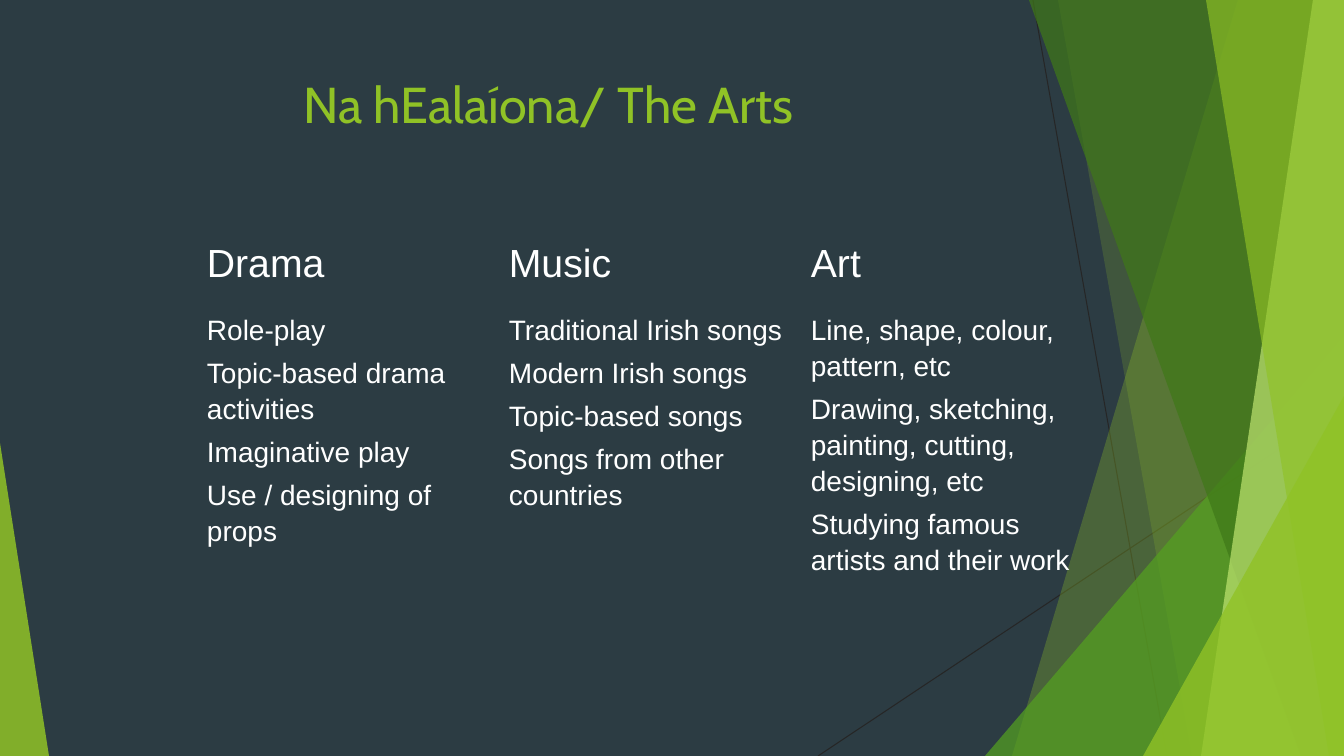
from dataclasses import dataclass

from lxml import etree
from pptx import Presentation
from pptx import util as u
from pptx.dml.color import RGBColor
from pptx.enum import shapes, text
from pptx.oxml.ns import qn

EMU_PER_PX = 914400 / 100.8
WIDTH, HEIGHT = 1344, 756
NO_GRID_STYLE = "{2D5ABB26-0587-4C30-8999-92F81FD0307C}"


@dataclass(frozen=True)
class Theme:
    background: str = "2C3C43"
    hairline: str = "262626"
    lime: str = "90C226"
    green: str = "54A021"
    forest: str = "3F7818"
    pale: str = "BFE471"
    white: str = "FFFFFF"
    title_font: str = "Cabin"
    body_font: str = "Arial"
    title_size: int = 36
    heading_size: int = 28
    body_size: int = 20


def px(length):
    return u.Emu(round(length * EMU_PER_PX))


class SlideBuilder:
    def __init__(self, page, theme):
        self.page = page
        self.theme = theme
        page.background.fill.solid()
        page.background.fill.fore_color.rgb = RGBColor.from_string(theme.background)

    def style_font(self, paragraph, name, size, color):
        paragraph.font.name = name
        paragraph.font.size = u.Pt(size)
        paragraph.font.color.rgb = RGBColor.from_string(color)

    def paint(self, shape, color, opacity):
        shape.shadow.inherit = False
        shape.line.fill.background()
        shape.fill.solid()
        shape.fill.fore_color.rgb = RGBColor.from_string(color)
        swatch = shape.fill._xPr.find(qn("a:solidFill"))[0]
        etree.SubElement(swatch, qn("a:alpha"), val=str(opacity * 1000))

    def hairline(self, x1, y1, x2, y2):
        line = self.page.shapes.add_connector(
            shapes.MSO_CONNECTOR.STRAIGHT, px(x1), px(y1), px(x2), px(y2))
        line.line.color.rgb = RGBColor.from_string(self.theme.hairline)
        line.line.width = u.Pt(0.75)
        etree.SubElement(line._element.spPr, qn("a:effectLst"))

    def right_band(self, top_x, bottom_x, color, opacity):
        outline = self.page.shapes.build_freeform(top_x, 0, scale=EMU_PER_PX)
        outline.add_line_segments([(WIDTH, 0), (WIDTH, HEIGHT), (bottom_x, HEIGHT)])
        self.paint(outline.convert_to_shape(), color, opacity)

    def corner(self, left, top, width, apex, color, opacity):
        triangle = self.page.shapes.add_shape(
            shapes.MSO_SHAPE.ISOSCELES_TRIANGLE,
            px(left), px(top), px(width), px(HEIGHT - top))
        triangle.adjustments[0] = apex
        self.paint(triangle, color, opacity)

    def title(self, words, left, top, width, height):
        box = self.page.shapes.add_textbox(px(left), px(top), px(width), px(height))
        frame = box.text_frame
        frame.word_wrap = True
        frame.vertical_anchor = text.MSO_ANCHOR.TOP
        paragraph = frame.paragraphs[0]
        paragraph.text = words
        paragraph.alignment = text.PP_ALIGN.CENTER
        self.style_font(paragraph, self.theme.title_font, self.theme.title_size, self.theme.lime)

    def cell(self, cell, lines, size, space_before):
        cell.fill.background()
        cell.margin_left = cell.margin_right = px(10)
        cell.margin_top = cell.margin_bottom = px(10)
        cell.text_frame.text = "\n".join(lines)
        for paragraph in cell.text_frame.paragraphs:
            paragraph.line_spacing = 1.15
            paragraph.space_before = u.Pt(space_before)
            self.style_font(paragraph, self.theme.body_font, size, self.theme.white)

    def table(self, subjects, left, top, column_width, row_heights):
        table = self.page.shapes.add_table(
            len(row_heights), len(subjects), px(left), px(top),
            px(column_width * len(subjects)), px(sum(row_heights))).table
        table.first_row = table.horz_banding = False
        table._tbl.tblPr.find(qn("a:tableStyleId")).text = NO_GRID_STYLE
        for row, height in zip(table.rows, row_heights):
            row.height = px(height)
        for index, (heading, activities) in enumerate(subjects.items()):
            table.columns[index].width = px(column_width)
            self.cell(table.cell(0, index), [heading], self.theme.heading_size, 7)
            self.cell(table.cell(1, index), activities, self.theme.body_size, 5)


SUBJECTS = {
    "Drama": [
        "Role-play",
        "Topic-based drama activities",
        "Imaginative play",
        "Use / designing of props",
    ],
    "Music": [
        "Traditional Irish songs",
        "Modern Irish songs",
        "Topic-based songs",
        "Songs from other countries",
    ],
    "Art": [
        "Line, shape, colour, pattern, etc",
        "Drawing, sketching, painting, cutting, designing, etc",
        "Studying famous artists and their work",
    ],
}


def main():
    deck = Presentation()
    deck.slide_width, deck.slide_height = px(WIDTH), px(HEIGHT)
    theme = Theme()
    slide = SlideBuilder(deck.slides.add_slide(deck.slide_layouts[6]), theme)

    slide.hairline(1033, 0, 1167, HEIGHT)
    slide.hairline(WIDTH, 406, 818, HEIGHT)
    slide.right_band(1238, 1012, theme.lime, 30)
    slide.right_band(1058, 1192, theme.lime, 20)
    slide.corner(985, 336, 359, 1, theme.green, 72)
    slide.right_band(1029, 1301, theme.forest, 70)
    slide.right_band(1313, 1201, theme.pale, 70)
    slide.right_band(1206, 1329, theme.lime, 65)
    slide.corner(1143, 396, 201, 1, theme.lime, 80)
    slide.corner(0, 443, 49, 0, theme.lime, 85)

    slide.title("Na hEalaíona/ The Arts", 75, 68, 947, 145)
    slide.table(SUBJECTS, 197, 226, 302, [75, 393])
    deck.save("out.pptx")


if __name__ == "__main__":
    main()
